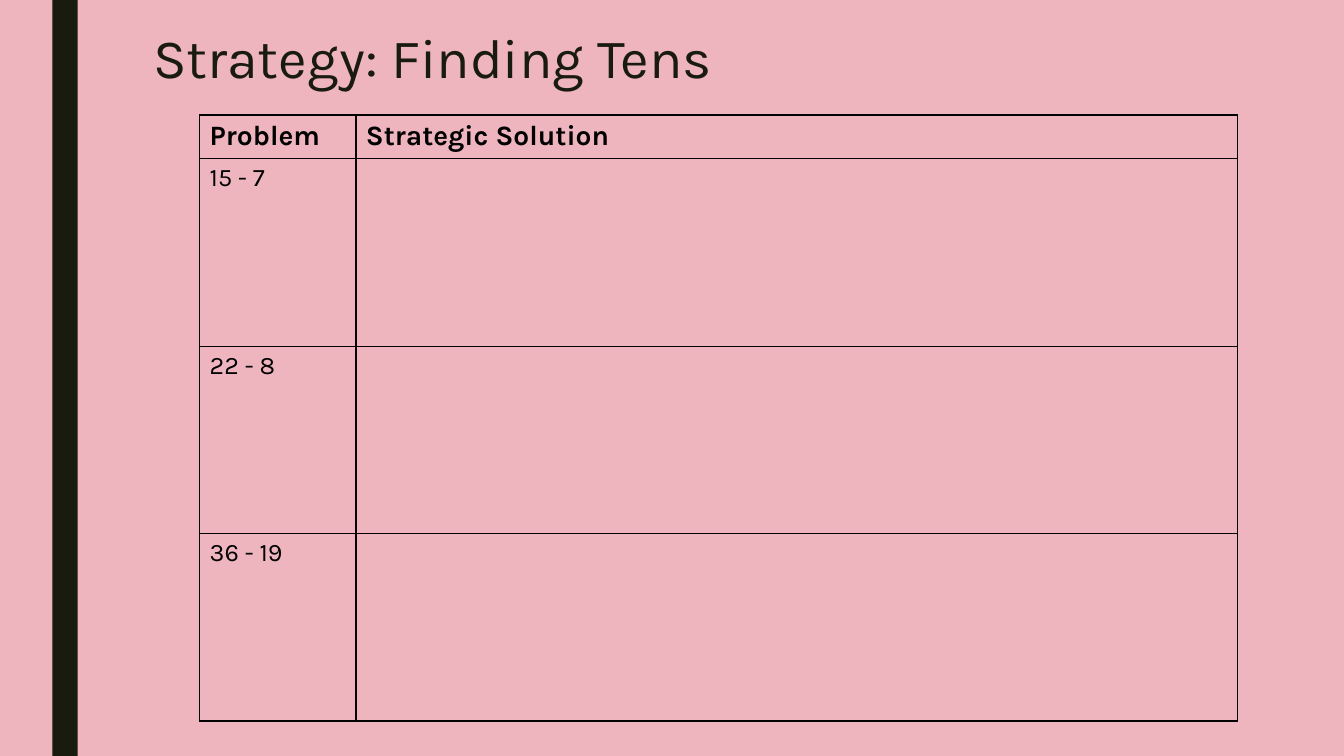
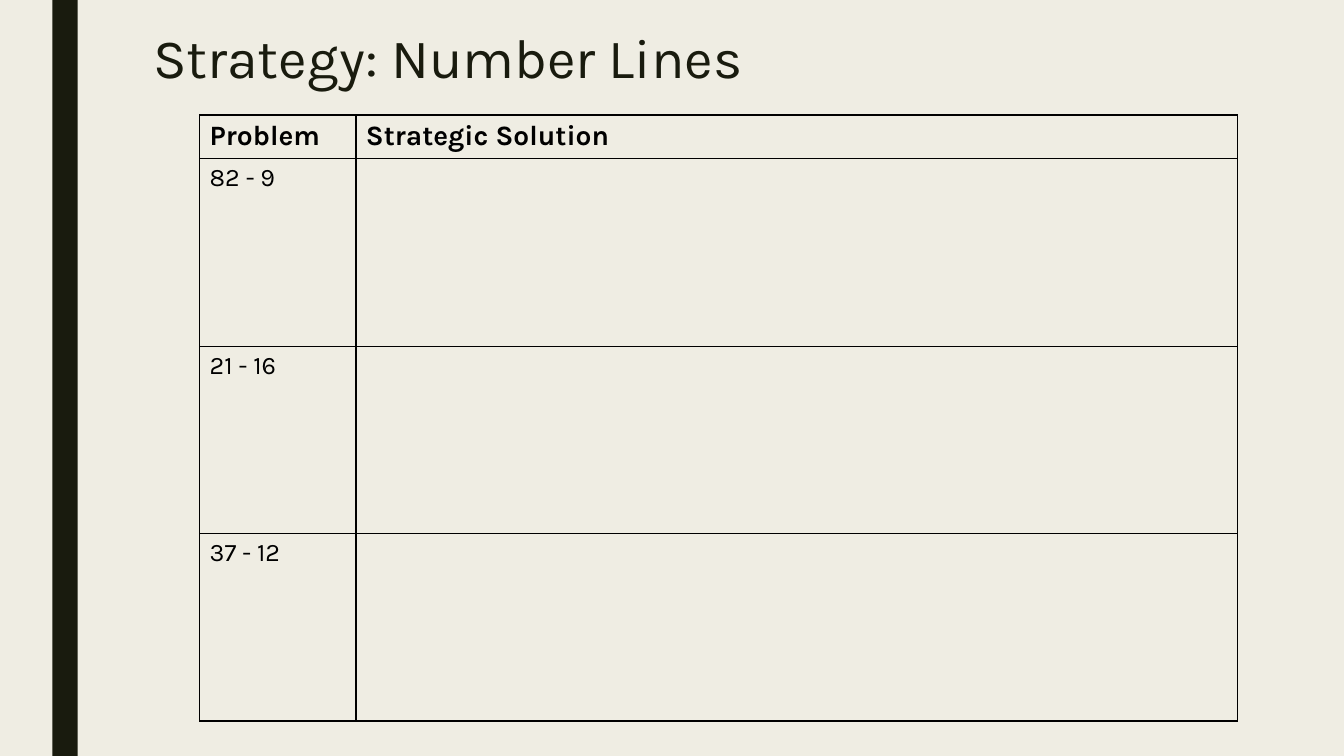
from lxml import etree
from pptx import Presentation
from pptx.dml.color import RGBColor
from pptx.enum.shapes import MSO_SHAPE
from pptx.enum.text import MSO_ANCHOR
from pptx.oxml.ns import qn
from pptx.util import Inches, Pt

RECT = MSO_SHAPE.RECTANGLE
MIDDLE = MSO_ANCHOR.MIDDLE

PINK = RGBColor(0xEE, 0xB5, 0xBF)
CREAM = RGBColor(0xEF, 0xED, 0xE3)
DARK = RGBColor(0x19, 0x1B, 0x0E)
BLACK = RGBColor(0, 0, 0)
FONT = "Karla"

COLS = [1.55, 8.74]
ROWS = [0.43] + [1.86] * 3
HEAD = ["Problem", "Strategic Solution"]
PAGES = [
    ("Strategy: Finding Tens", PINK, ["15 - 7", "22 - 8", "36 - 19"]),
    ("Strategy: Number Lines", CREAM, ["82 - 9", "21 - 16", "37 - 12"]),
]


def style(par, size, color, bold=False):
    for run in par.runs:
        run.font.name = FONT
        run.font.size = Pt(size)
        run.font.bold = bold
        run.font.color.rgb = color


def frame(cell):
    """Give a cell a thin line on all four sides and no fill."""
    props = cell._tc.get_or_add_tcPr()
    for side in ("a:lnL", "a:lnR", "a:lnT", "a:lnB"):
        line = etree.SubElement(props, qn(side), w=str(Pt(1)))
        fill = etree.SubElement(line, qn("a:solidFill"))
        etree.SubElement(fill, qn("a:srgbClr"), val=str(BLACK))
    cell.fill.background()


prs = Presentation()
prs.slide_width = Inches(13.33)
prs.slide_height = Inches(7.5)
blank = prs.slide_layouts[6]

for name, back, tasks in PAGES:
    slide = prs.slides.add_slide(blank)
    slide.background.fill.solid()
    slide.background.fill.fore_color.rgb = back

    band = slide.shapes.add_shape(
        RECT, Inches(0.52), 0, Inches(0.25), prs.slide_height)
    band.shadow.inherit = False
    band.fill.solid()
    band.fill.fore_color.rgb = DARK
    band.line.fill.background()

    title = slide.shapes.add_textbox(
        Inches(1.42), Inches(0.23), Inches(10.5), Inches(0.75)).text_frame
    title.word_wrap = True
    title.vertical_anchor = MIDDLE
    title.text = name
    title.paragraphs[0].line_spacing = 0.89
    style(title.paragraphs[0], 39.6, DARK)

    table = slide.shapes.add_table(
        len(ROWS), len(COLS), Inches(1.98), Inches(1.14),
        Inches(sum(COLS)), Inches(sum(ROWS))).table
    table.first_row = False
    table.horz_banding = False
    for col, width in zip(table.columns, COLS):
        col.width = Inches(width)
    for row, height in zip(table.rows, ROWS):
        row.height = Inches(height)

    texts = [HEAD] + [[task, ""] for task in tasks]
    for r, line in enumerate(texts):
        for c, text in enumerate(line):
            cell = table.cell(r, c)
            frame(cell)
            if text:
                cell.text_frame.text = text
                style(cell.text_frame.paragraphs[0],
                      18 if r else 20, BLACK, bold=r == 0)

prs.save("out.pptx")
